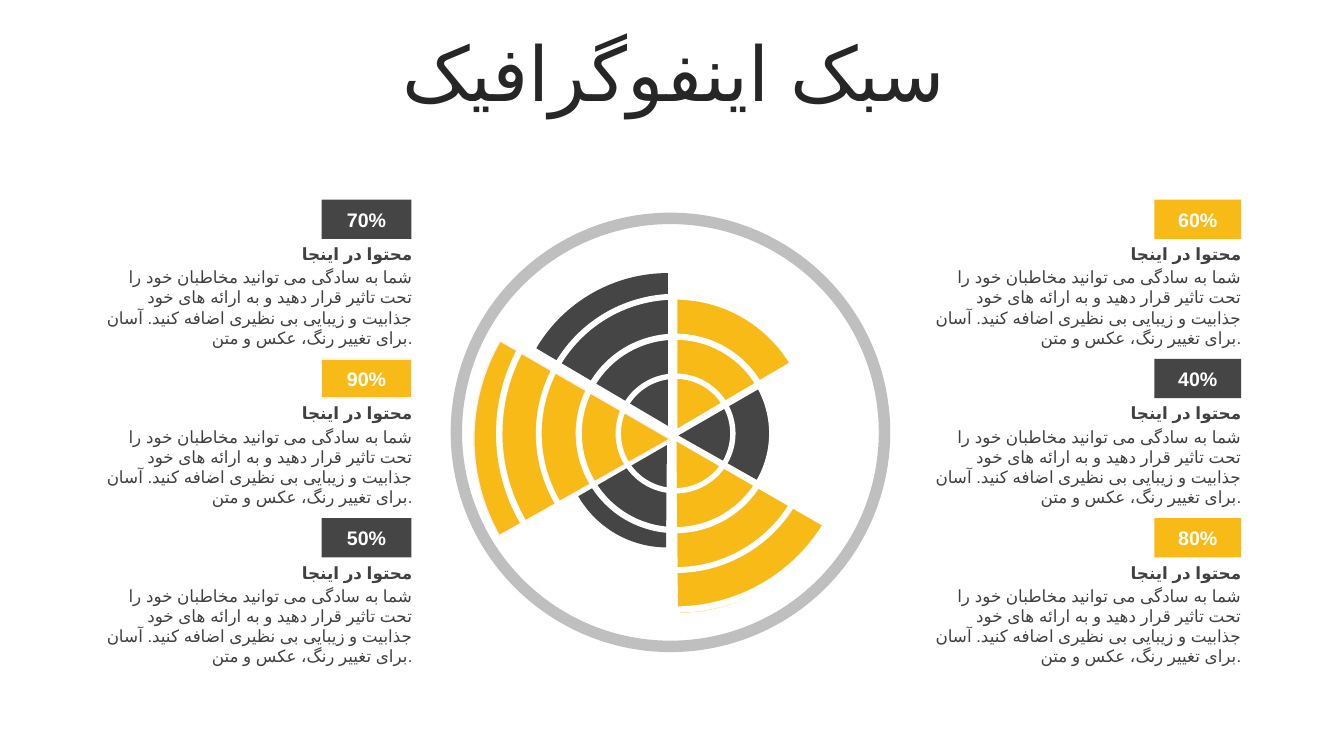
from lxml import etree
from pptx import Presentation
from pptx.dml.color import RGBColor
from pptx.enum.lang import MSO_LANGUAGE_ID
from pptx.enum.shapes import MSO_SHAPE
from pptx.enum.text import MSO_ANCHOR, PP_ALIGN
from pptx.oxml.ns import qn
from pptx.util import Inches, Pt

RECT, PIE, DONUT = MSO_SHAPE.RECTANGLE, MSO_SHAPE.PIE, MSO_SHAPE.DONUT
CENTER, RIGHT = PP_ALIGN.CENTER, PP_ALIGN.RIGHT
TOP, MIDDLE = MSO_ANCHOR.TOP, MSO_ANCHOR.MIDDLE
PERSIAN = MSO_LANGUAGE_ID.FARSI

FONT = "Arial"
YELLOW, DARK, WHITE = "F8BA16", "454545", "FFFFFF"
GREY, PALE, INK, TITLE_INK = "BFBFBF", "F2F2F2", "404040", "262626"

HEADING = "محتوا در اینجا"
BODY = ("شما به سادگی می توانید مخاطبان خود را تحت تاثیر قرار دهید و به ارائه های "
        "خود جذابیت و زیبایی بی نظیری اضافه کنید. آسان برای تغییر رنگ، عکس و متن.")

prs = Presentation()
prs.slide_width, prs.slide_height = Inches(13.33), Inches(7.5)
slide = prs.slides.add_slide(prs.slide_layouts[6])


def draw(kind, left, top, width, height, fill, outline=None):
    shape = slide.shapes.add_shape(
        kind, Inches(left), Inches(top), Inches(width), Inches(height))
    shape.shadow.inherit = False
    shape.fill.solid()
    shape.fill.fore_color.rgb = RGBColor.from_string(fill)
    if outline:
        shape.line.color.rgb = RGBColor.from_string(outline)
        shape.line.width = Pt(1)
    else:
        shape.line.fill.background()
    return shape


def write(shape, text, size, color, align, anchor, bold=False):
    frame = shape.text_frame
    frame.word_wrap = True
    frame.vertical_anchor = anchor
    paragraph = frame.paragraphs[0]
    paragraph.text = text
    paragraph.alignment = align
    font = paragraph.font
    font.size, font.bold = Pt(size), bold
    font.color.rgb = RGBColor.from_string(color)
    font.name = FONT
    font.language_id = PERSIAN
    # Arabic script takes the complex-script typeface
    etree.SubElement(font._rPr, qn("a:cs"), typeface=FONT, pitchFamily="34", charset="0")
    return paragraph


# Title
title_box = slide.shapes.add_textbox(
    Inches(0.35), Inches(0.37), Inches(12.66), Inches(0.79))
title = write(title_box, "سبک اینفوگرافیک", 54, TITLE_INK, CENTER, MIDDLE)
title.line_spacing = 0.9
title.space_before = Pt(10)

# Outer ring
outer_ring = draw(DONUT, 4.47, 2.11, 4.36, 4.36, GREY)
outer_ring.adjustments[0] = 0.026

# Wedges: left, top, width, height, rotation, mirrored, fill, outline
wedges = [
    (5.11, 2.71, 3.03, 3.03, 0, False, DARK, None),
    (4.70, 2.41, 3.89, 3.89, 300, False, YELLOW, PALE),
    (5.60, 3.40, 2.03, 2.03, 240, False, DARK, None),
    (5.40, 2.92, 2.64, 2.66, 0, True, YELLOW, None),
    (5.78, 3.37, 1.90, 1.90, 60, True, DARK, None),
    (5.01, 2.68, 3.40, 3.40, 120, True, YELLOW, None),
]
START_ANGLE, END_ANGLE = 210.5, 270
ADJUST_PER_DEGREE = 0.6
for left, top, width, height, rotation, mirrored, fill, outline in wedges:
    wedge = draw(PIE, left, top, width, height, fill, outline)
    wedge.adjustments[0] = START_ANGLE * ADJUST_PER_DEGREE
    wedge.adjustments[1] = END_ANGLE * ADJUST_PER_DEGREE
    wedge.rotation = rotation
    if mirrored:
        wedge._element.spPr.xfrm.set("flipH", "1")

# White rings that cut the wedges into steps
RING_X, RING_Y = 6.7, 4.3
for step, thickness in enumerate((0.045, 0.031, 0.021, 0.018)):
    size = 1.19 + 0.79 * step
    ring = draw(DONUT, RING_X - size / 2, RING_Y - size / 2, size, size, WHITE)
    ring.adjustments[0] = thickness

# Two columns: badge left, badge width, text left, (share, fill, outline) per row
columns = [
    (3.19, 0.89, 0.88,
     [("70%", DARK, None), ("90%", YELLOW, PALE), ("50%", DARK, None)]),
    (11.45, 0.86, 9.10,
     [("60%", YELLOW, None), ("40%", DARK, None), ("80%", YELLOW, None)]),
]
FIRST_ROW, ROW_STEP, BADGE_HEIGHT, TEXT_WIDTH = 1.98, 1.58, 0.39, 3.31
for badge_left, badge_width, text_left, entries in columns:
    for row, (share, fill, outline) in enumerate(entries):
        top = FIRST_ROW + row * ROW_STEP
        badge = draw(RECT, badge_left, top, badge_width, BADGE_HEIGHT, fill, outline)
        write(badge, share, 14, WHITE, CENTER, MIDDLE, bold=True)
        for text, drop, height, bold in ((BODY, 0.62, 0.71, False),
                                         (HEADING, 0.39, 0.3, True)):
            text_box = slide.shapes.add_textbox(
                Inches(text_left), Inches(top + drop), Inches(TEXT_WIDTH), Inches(height))
            write(text_box, text, 12, INK, RIGHT, TOP, bold)

prs.save("out.pptx")
